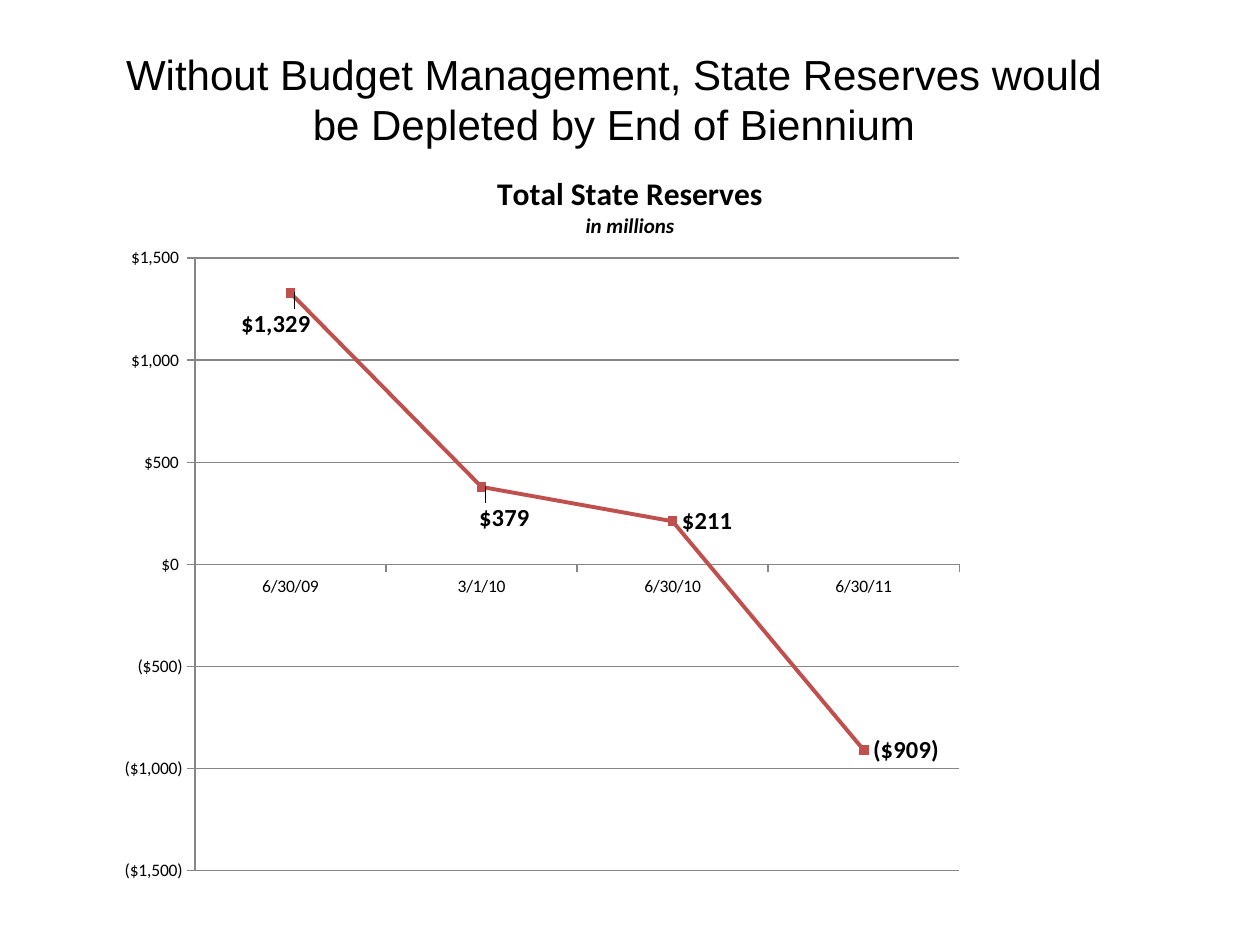
from dataclasses import dataclass

from lxml import etree
from pptx import Presentation
from pptx import util as u
from pptx.chart.data import CategoryChartData
from pptx.dml.color import RGBColor
from pptx.enum import chart as ch
from pptx.enum import text as t

SCALE = 914400 / 126
MONEY = '"$"#,##0_);\\("$"#,##0\\)'


@dataclass(frozen=True)
class Theme:
    ink: str = "000000"
    grid: str = "868686"
    trend: str = "C0504D"
    head: str = "Arial"
    body: str = "Calibri"
    title: int = 24
    name: int = 18
    unit: int = 12
    tick: int = 10
    label: int = 14


def px(n):
    return u.Emu(round(n * SCALE))


class Deck:
    def __init__(self, theme):
        self.theme = theme
        self.prs = Presentation()
        self.prs.slide_width, self.prs.slide_height = px(1260), px(945)
        self.slide = self.prs.slides.add_slide(self.prs.slide_layouts[6])

    def font(self, font, face, size, bold=False, italic=False):
        font.name, font.size = face, u.Pt(size)
        font.bold, font.italic = bold, italic
        font.color.rgb = RGBColor.from_string(self.theme.ink)

    def line(self, line, color, width):
        line.color.rgb = RGBColor.from_string(color)
        line.width = u.Pt(width)

    def title(self, words, x, y, w, h):
        frame = self.slide.shapes.add_textbox(px(x), px(y), px(w), px(h)).text_frame
        frame.word_wrap = True
        frame.auto_size = t.MSO_AUTO_SIZE.SHAPE_TO_FIT_TEXT
        para = frame.paragraphs[0]
        para.text = words
        para.alignment = t.PP_ALIGN.CENTER
        self.font(para.font, self.theme.head, self.theme.title)

    def layout(self, parent, place, inner=False):
        for old in parent.findall("{*}layout"):
            parent.remove(old)
        ns = etree.QName(parent).namespace
        box = etree.Element(f"{{{ns}}}layout")
        form = etree.SubElement(box, f"{{{ns}}}manualLayout")
        modes = {"layoutTarget": "inner", "xMode": "edge", "yMode": "edge"} if inner else {}
        for tag, val in {**modes, **place}.items():
            etree.SubElement(form, f"{{{ns}}}{tag}").set("val", str(val))
        parent.insert(0 if inner else 1, box)

    def chart(self, name, unit, points, shifts, x, y, w, h, plot):
        th = self.theme
        data = CategoryChartData(number_format=MONEY)
        data.categories = list(points)
        data.add_series("Series 1", points.values())
        chart = self.slide.shapes.add_chart(
            ch.XL_CHART_TYPE.LINE_MARKERS, px(x), px(y), px(w), px(h), data).chart
        self.font(chart.font, th.body, th.tick)
        chart.has_legend = False
        self.caption(chart, name, unit)
        self.axes(chart)
        area = chart.plots[0]
        area.vary_by_categories = False
        self.trend(area.series[0], shifts)
        frame = chart.value_axis._element.getparent()
        self.layout(frame, dict(zip("xywh", plot)), inner=True)

    def caption(self, chart, name, unit):
        th = self.theme
        frame = chart.chart_title.text_frame
        frame.text = f"{name}\n{unit}"
        top, sub = frame.paragraphs
        self.font(top.font, th.body, th.name, bold=True)
        self.font(sub.font, th.body, th.unit, bold=True, italic=True)
        chart.chart_title.include_in_layout = False

    def axes(self, chart):
        th = self.theme
        for axis in (chart.category_axis, chart.value_axis):
            axis.major_tick_mark = ch.XL_TICK_MARK.OUTSIDE
            axis.minor_tick_mark = ch.XL_TICK_MARK.NONE
            self.font(axis.tick_labels.font, th.body, th.tick)
            self.line(axis.format.line, th.grid, 0.75)
        axis = chart.value_axis
        axis.minimum_scale, axis.maximum_scale, axis.major_unit = -1500, 1500, 500
        axis.tick_labels.number_format = MONEY
        axis.tick_labels.number_format_is_linked = False
        axis.has_major_gridlines = True
        self.line(axis.major_gridlines.format.line, th.grid, 0.75)

    def trend(self, series, shifts):
        th = self.theme
        series.smooth = False
        self.line(series.format.line, th.trend, 2.25)
        mark = series.marker
        mark.style, mark.size = ch.XL_MARKER_STYLE.SQUARE, 5
        mark.format.fill.solid()
        mark.format.fill.fore_color.rgb = RGBColor.from_string(th.trend)
        self.line(mark.format.line, th.trend, 0.75)
        labels = series.data_labels
        labels.show_value = True
        labels.number_format, labels.number_format_is_linked = MONEY, False
        labels.position = ch.XL_LABEL_POSITION.RIGHT
        self.font(labels.font, th.body, th.label, bold=True)
        for i, (dx, dy) in shifts.items():
            label = series.points[i].data_label
            self.font(label.font, th.body, th.label, bold=True)
            label.position = ch.XL_LABEL_POSITION.RIGHT
            node = labels._element.find(f"{{*}}dLbl/{{*}}idx[@val='{i}']").getparent()
            self.layout(node, {"x": dx, "y": dy})


def main():
    deck = Deck(Theme())
    deck.chart(
        "Total State Reserves", "in millions",
        {"6/30/09": 1329, "3/1/10": 379, "6/30/10": 211, "6/30/11": -909},
        {0: (-0.05, 0.04), 1: (-0.01, 0.04)},
        42, 147, 1176, 766, (0.13, 0.145, 0.65, 0.8))
    deck.title(
        "Without Budget Management, State Reserves would be Depleted by End of Biennium",
        94, 42, 1040, 115)
    deck.prs.save("out.pptx")


if __name__ == "__main__":
    main()
